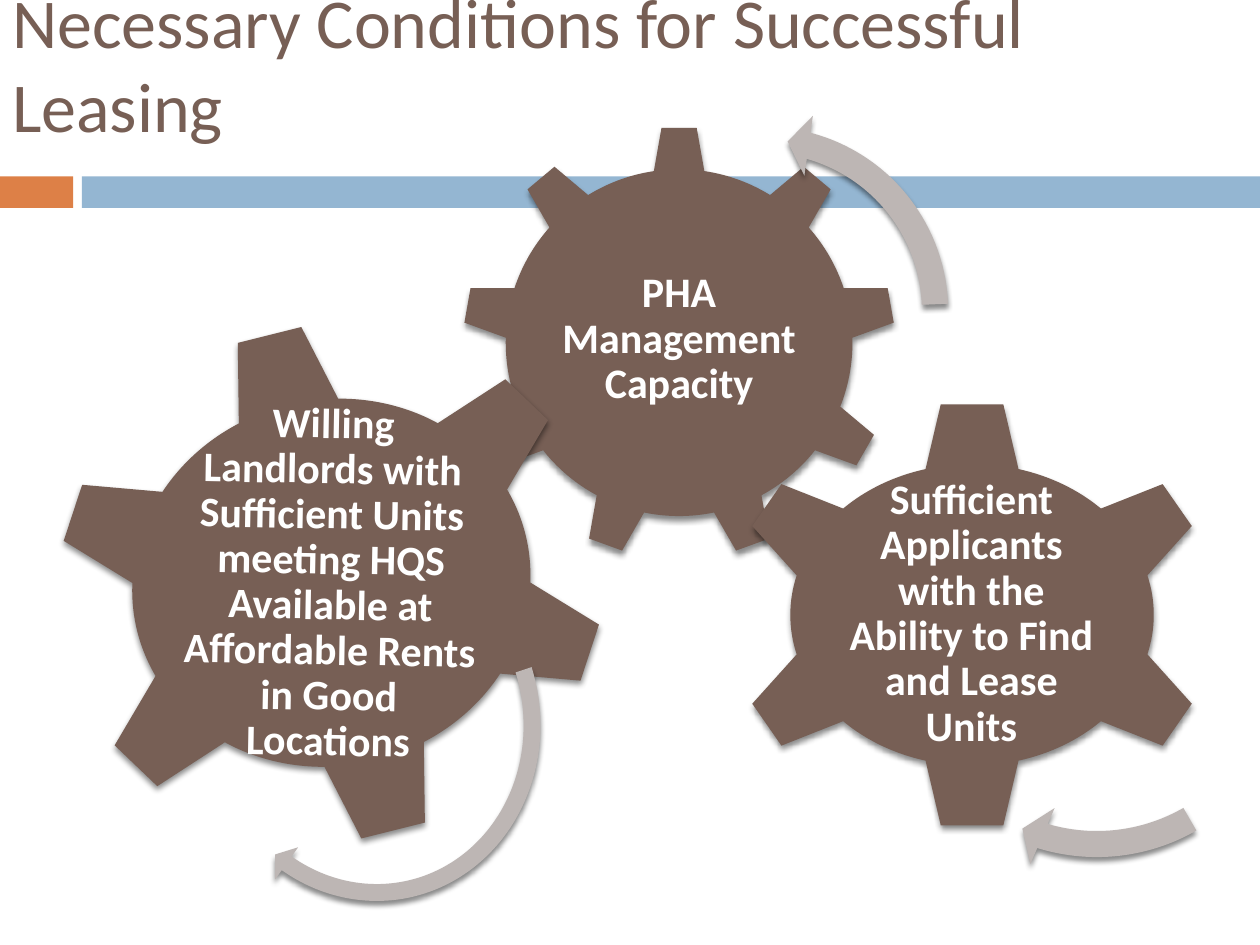
from lxml import etree
from pptx import Presentation
from pptx.dml.color import RGBColor
from pptx.enum import shapes as es, text as et
from pptx.oxml import ns
from pptx.util import Inches, Pt

BROWN = RGBColor(0x77, 0x5F, 0x55)
GRAY = RGBColor(0xBD, 0xB6, 0xB4)
ORANGE = RGBColor(0xDD, 0x80, 0x47)
BLUE = RGBColor(0x94, 0xB6, 0xD2)
WHITE = RGBColor(0xFF, 0xFF, 0xFF)
KIND = es.MSO_SHAPE

BARS = [((0, 1.4, 0.58, 0.25), ORANGE), ((0.65, 1.4, 9.35, 0.25), BLUE)]
GEARS = [
    (KIND.GEAR_9, (3.67, 1, 3.44, 3.44), 0,
     "PHA Management Capacity", (4.36, 1.81, 2.06, 1.77), 0),
    (KIND.GEAR_6, (5.76, 3.17, 3.91, 3.42), 0,
     "Sufficient Applicants with the Ability to Find and Lease Units",
     (6.69, 4.03, 2.04, 1.69), 0),
    (KIND.GEAR_6, (0.42, 2.55, 4.42, 4.15), 346,
     "Willing Landlords with Sufficient Units meeting HQS "
     "Available at Affordable Rents in Good Locations",
     (1.4, 3.45, 2.45, 2.36), 1),
]
ARROWS = [
    (KIND.CIRCULAR_ARROW, (1.42, 4.29, 3.06, 2.85), 78.3,
     (0.047, 2.99, 25.435, 158.035, 0.055)),
    (KIND.LEFT_CIRCULAR_ARROW, (4.46, 0.87, 3.2, 3.2), 110.4,
     (0.065, 4.3, 104.891, 148.378, 0.075)),
    (KIND.CIRCULAR_ARROW, (6.98, 3.49, 3.45, 3.45), 245,
     (0.06, 3.941, 133.138, 105.082, 0.07)),
]


def add_shape(home, kind, box, fill, turn=0):
    shape = home.add_shape(kind, *map(Inches, box))
    shape.shadow.inherit = False
    shape.fill.solid()
    shape.fill.fore_color.rgb = fill
    shape.line.fill.background()
    shape.rotation = turn
    return shape


def add_shadow(shape):
    effects = shape._element.spPr.find(ns.qn("a:effectLst"))
    outer = etree.SubElement(
        effects, ns.qn("a:outerShdw"), blurRad=str(Pt(3)),
        dist=str(Pt(2.4)), dir="5400000", rotWithShape="0")
    color = etree.SubElement(outer, ns.qn("a:srgbClr"), val="000000")
    etree.SubElement(color, ns.qn("a:alpha"), val="45000")


def add_text(home, words, box, size=24, color=WHITE, bold=False,
             align=None, space=None, inset=None, turn=0):
    label = home.add_textbox(*map(Inches, box))
    label.rotation = turn
    frame = label.text_frame
    frame.word_wrap = True
    frame.vertical_anchor = et.MSO_ANCHOR.MIDDLE
    if inset is not None:
        frame.margin_left = frame.margin_right = Inches(inset)
        frame.margin_top = frame.margin_bottom = Inches(inset)
    para = frame.paragraphs[0]
    para.alignment = align
    para.line_spacing = space
    run = para.add_run()
    run.text = words
    font = run.font
    font.name, font.size, font.bold = "Calibri", Pt(size), bold
    font.color.rgb = color


def add_gear(home, kind, box, turn, words, area, tilt):
    add_shadow(add_shape(home, kind, box, BROWN, turn))
    add_text(home, words, area, bold=True, align=et.PP_ALIGN.CENTER,
             space=0.9, inset=0.03, turn=tilt)


def add_arrow(home, kind, box, turn, bends):
    arrow = add_shape(home, kind, box, GRAY, turn)
    for i, bend in enumerate(bends):
        arrow.adjustments[i] = bend
    add_shadow(arrow)


def main():
    deck = Presentation()
    deck.slide_width, deck.slide_height = Inches(10), Inches(7.5)
    slide = deck.slides.add_slide(deck.slide_layouts[6])
    for box, fill in BARS:
        add_shape(slide.shapes, KIND.RECTANGLE, box, fill)
    add_text(slide.shapes, "Necessary Conditions for Successful Leasing",
             (0, 0, 10, 1), size=40, color=BROWN)
    group = slide.shapes.add_group_shape().shapes
    for gear in GEARS:
        add_gear(group, *gear)
    for arrow in ARROWS:
        add_arrow(group, *arrow)
    deck.save("out.pptx")


if __name__ == "__main__":
    main()
